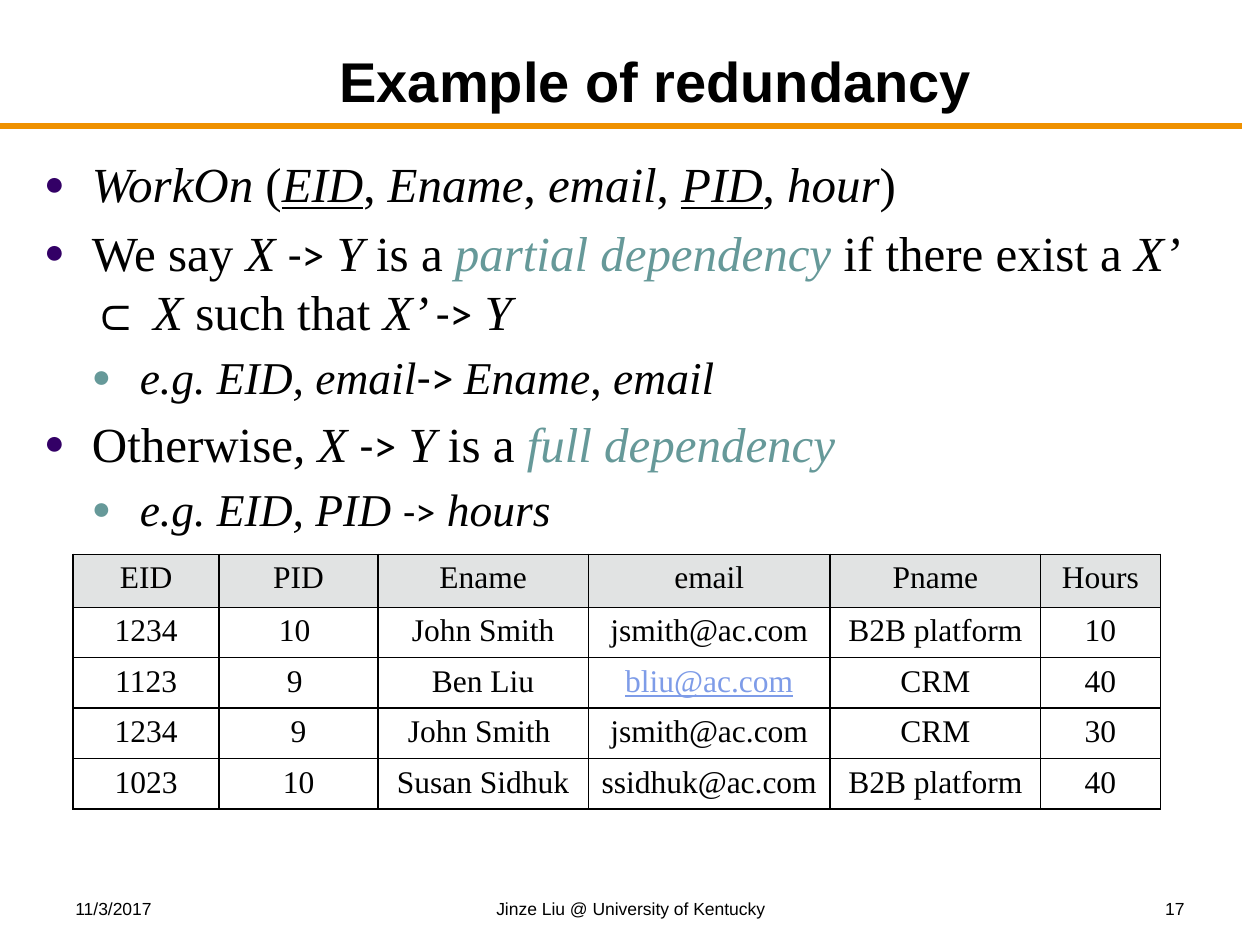
"""Build a slide on redundancy, partial dependencies and full dependencies."""
from dataclasses import dataclass

from lxml.etree import SubElement
from pptx import Presentation
from pptx.dml.color import RGBColor
from pptx.enum.shapes import MSO_CONNECTOR as Connector
from pptx.enum.text import MSO_ANCHOR as Anchor, MSO_AUTO_SIZE as AutoSize, PP_ALIGN as Align
from pptx.oxml.ns import qn
from pptx.util import Inches, Pt

BLACK = RGBColor(0x00, 0x00, 0x00)
PURPLE = RGBColor(0x33, 0x00, 0x66)
TEAL = RGBColor(0x66, 0x99, 0x99)
ORANGE = RGBColor(0xEF, 0x91, 0x00)
LINK_BLUE = RGBColor(0x7E, 0x9C, 0xE8)
HEADER_GRAY = RGBColor(0xE1, 0xE3, 0xE3)
SANS, SERIF, ARROW_FONT = "Arial", "Times New Roman", "Calibri"
INDENT = 0.38
LEVEL_SIZES = (28, 26)
BULLET_COLORS = (PURPLE, TEAL)


@dataclass(frozen=True)
class Span:
    text: str
    italic: bool = False
    underline: bool = False
    color: RGBColor = BLACK
    font: str = SERIF
    size: float | None = None
    bold: bool = False


@dataclass(frozen=True)
class Bullet:
    level: int
    spans: tuple[Span, ...]


@dataclass(frozen=True)
class Footer:
    text: str
    left: float
    width: float
    align: Align


def italic(text: str) -> Span:
    return Span(text, italic=True)


def key(text: str) -> Span:
    return Span(text, italic=True, underline=True)


def term(text: str) -> Span:
    return Span(text, italic=True, color=TEAL)


def arrow(size: float, text: str = "->") -> Span:
    return Span(text, font=ARROW_FONT, size=size)


COMMA = Span(", ")
SPACE = Span(" ")
IS_A = (arrow(26), SPACE, italic("Y"), Span(" is a "))

BULLETS = (
    Bullet(0, (italic("WorkOn"), Span(" ("), key("EID"), COMMA, italic("Ename"), COMMA,
               italic("email"), COMMA, key("PID"), COMMA, italic("hour"), Span(")"))),
    Bullet(0, (Span("We say "), italic("X "), *IS_A, term("partial dependency"),
               Span(" if there exist a "), italic("X’ "), Span("⊂ "), italic("X"),
               Span(" such that "), italic("X’ "), arrow(26), SPACE, italic("Y"))),
    Bullet(1, (italic("e.g. EID, email"), arrow(26, "-> "), italic("Ename"), COMMA,
               italic("email"))),
    Bullet(0, (Span("Otherwise"), italic(", X "), *IS_A, term("full dependency"))),
    Bullet(1, (italic("e.g. EID, PID "), arrow(23), SPACE, italic("hours"))),
)

FOOTERS = (
    Footer("11/3/2017", 0.5, 2.33, Align.LEFT),
    Footer("Jinze Liu @ University of Kentucky", 3.42, 3.17, Align.CENTER),
    Footer("17", 7.17, 2.33, Align.RIGHT),
)

COLUMN_WIDTHS = (1.16, 1.26, 1.67, 1.92, 1.67, 0.95)
ROW_HEIGHTS = (0.42, 0.4, 0.4, 0.4, 0.4)
ROWS = (
    ("EID", "PID", "Ename", "email", "Pname", "Hours"),
    ("1234", "10 ", "John Smith", "jsmith@ac.com", "B2B platform", "10"),
    ("1123", "9 ", "Ben Liu", "bliu@ac.com", "CRM", "40"),
    ("1234", "9", "John Smith ", "jsmith@ac.com", "CRM", "30"),
    ("1023", "10", "Susan Sidhuk", "ssidhuk@ac.com", "B2B platform", "40"),
)
LINKED = "bliu@ac.com"


def place(shape, left: float, top: float, width: float, height: float) -> None:
    shape.left, shape.top = Inches(left), Inches(top)
    shape.width, shape.height = Inches(width), Inches(height)


def add_span(para, span: Span, size: float) -> None:
    run = para.add_run()
    run.text = span.text
    font = run.font
    font.name, font.size = span.font, Pt(span.size or size)
    font.bold, font.italic, font.underline = span.bold, span.italic, span.underline
    font.color.rgb = span.color


def set_bullet(para, level: int) -> None:
    props = para._p.get_or_add_pPr()
    props.set("marL", str(Inches(INDENT * (level + 1))))
    props.set("indent", str(-Inches(INDENT)))
    color = SubElement(props, qn("a:buClr"))
    SubElement(color, qn("a:srgbClr"), val=str(BULLET_COLORS[level]))
    SubElement(props, qn("a:buSzPct"), val="70000")
    SubElement(props, qn("a:buFont"), typeface=SANS)
    SubElement(props, qn("a:buChar"), char="●")


def set_borders(cell) -> None:
    props = cell._tc.get_or_add_tcPr()
    for index, side in enumerate(("lnL", "lnR", "lnT", "lnB")):
        line = props.makeelement(qn(f"a:{side}"), {"w": str(Pt(1))})
        fill = SubElement(line, qn("a:solidFill"))
        SubElement(fill, qn("a:srgbClr"), val=str(BLACK))
        props.insert(index, line)


def add_rule(page) -> None:
    rule = page.shapes.add_connector(
        Connector.STRAIGHT, Inches(0), Inches(1), Inches(9.86), Inches(1))
    rule.line.color.rgb = ORANGE
    rule.line.width = Pt(3)
    SubElement(rule._element.spPr, qn("a:effectLst"))


def add_footer(page, footer: Footer) -> None:
    box = page.shapes.add_textbox(
        Inches(footer.left), Inches(7.08), Inches(footer.width), Inches(0.25))
    box.text_frame.word_wrap = True
    para = box.text_frame.paragraphs[0]
    para.alignment = footer.align
    add_span(para, Span(footer.text, font=SANS), 10)


def fill_title(title) -> None:
    place(title, 1.08, 0.25, 8.25, 0.7)
    frame = title.text_frame
    frame.vertical_anchor = Anchor.BOTTOM
    frame.auto_size = AutoSize.NONE
    para = frame.paragraphs[0]
    para.alignment = Align.CENTER
    add_span(para, Span("Example of redundancy", font=SANS, bold=True), 32)


def fill_body(body) -> None:
    place(body, 0.25, 1.17, 9.42, 5.75)
    frame = body.text_frame
    frame.auto_size = AutoSize.NONE
    for index, bullet in enumerate(BULLETS):
        para = frame.add_paragraph() if index else frame.paragraphs[0]
        para.level = bullet.level
        set_bullet(para, bullet.level)
        for span in bullet.spans:
            add_span(para, span, LEVEL_SIZES[bullet.level])


def add_work_table(page) -> None:
    table = page.shapes.add_table(
        len(ROWS), len(COLUMN_WIDTHS), Inches(0.58), Inches(4.4),
        Inches(sum(COLUMN_WIDTHS)), Inches(sum(ROW_HEIGHTS))).table
    table.first_row = table.horz_banding = False
    for column, width in zip(table.columns, COLUMN_WIDTHS):
        column.width = Inches(width)
    for index, (row, height, texts) in enumerate(zip(table.rows, ROW_HEIGHTS, ROWS)):
        row.height = Inches(height)
        for cell, text in zip(row.cells, texts):
            if index == 0:
                cell.fill.solid()
                cell.fill.fore_color.rgb = HEADER_GRAY
            else:
                cell.fill.background()
            set_borders(cell)
            para = cell.text_frame.paragraphs[0]
            para.alignment = Align.CENTER
            para.space_before = Pt(3.6)
            linked = text == LINKED
            color = LINK_BLUE if linked else BLACK
            add_span(para, Span(text, underline=linked, color=color), 18)


def main() -> None:
    deck = Presentation()
    deck.slide_width, deck.slide_height = Inches(10), Inches(7.5)
    page = deck.slides.add_slide(deck.slide_layouts[1])
    add_rule(page)
    for footer in FOOTERS:
        add_footer(page, footer)
    fill_title(page.shapes.title)
    fill_body(page.placeholders[1])
    add_work_table(page)
    deck.save("out.pptx")


if __name__ == "__main__":
    main()
